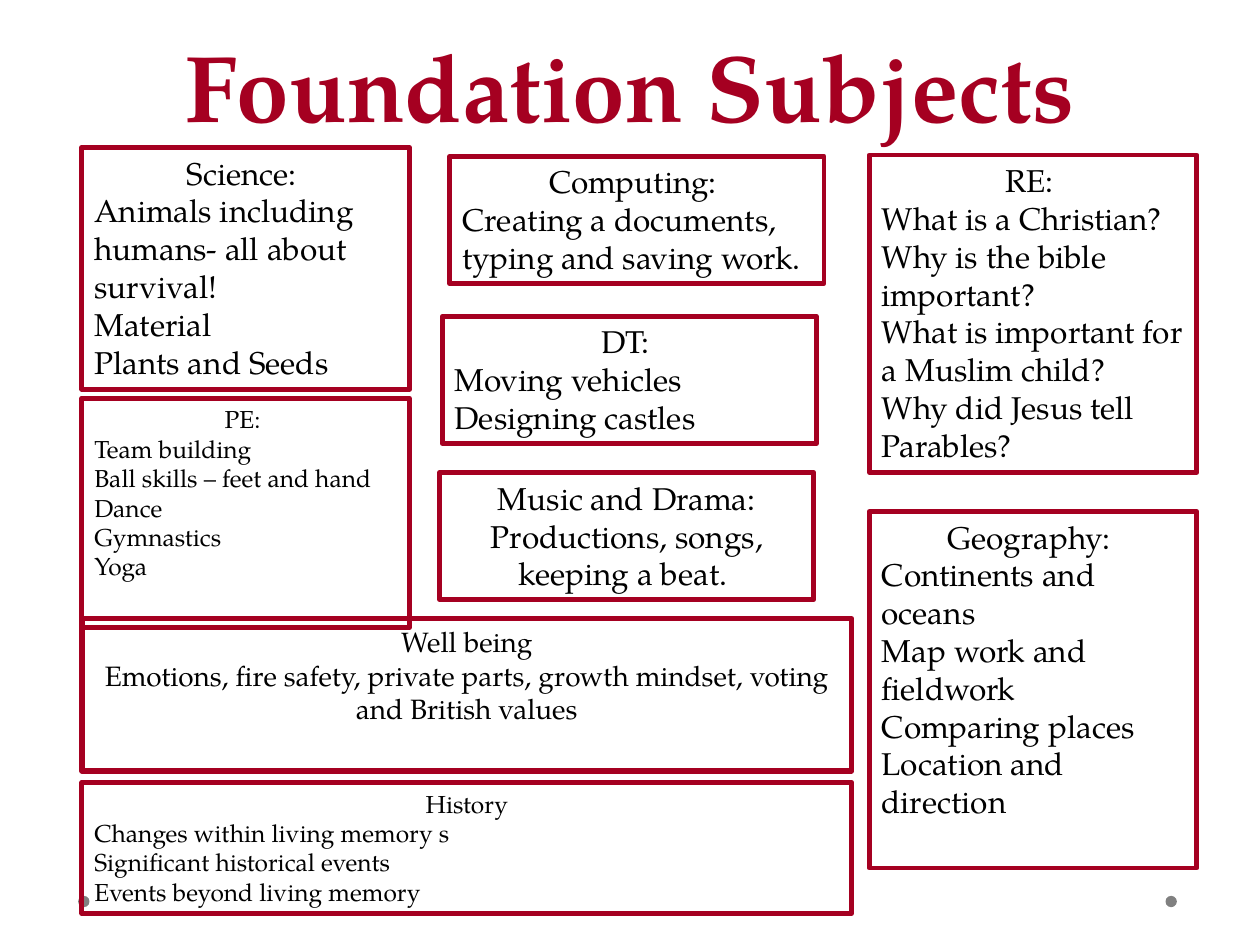
"""Build the Foundation Subjects overview slide."""
from pptx import Presentation
from pptx.dml.color import RGBColor
from pptx.enum.shapes import MSO_SHAPE
from pptx.enum.text import MSO_ANCHOR, MSO_AUTO_SIZE, PP_ALIGN
from pptx.util import Inches, Pt

CENTER, LEFT = PP_ALIGN.CENTER, PP_ALIGN.LEFT
TOP, BOTTOM = MSO_ANCHOR.TOP, MSO_ANCHOR.BOTTOM
OVAL, NO_FIT = MSO_SHAPE.OVAL, MSO_AUTO_SIZE.NONE

THEME = {
    "font": "TeX Gyre Pagella",
    "crimson": RGBColor.from_string("A50021"),
    "ink": RGBColor.from_string("000000"),
    "dot": RGBColor.from_string("808080"),
    "title": 54, "large": 18, "medium": 16, "small": 14,
    "border": 2.75, "heavy border": 3,
}

deck = Presentation()
deck.slide_width, deck.slide_height = Inches(10), Inches(7.5)
COLUMN, ROW = deck.slide_width / 100, deck.slide_height / 75
page = deck.slides.add_slide(deck.slide_layouts[5])


def cells(left, top, width, height):
    """Turn grid columns and rows into slide lengths."""
    return [int(left * COLUMN), int(top * ROW), int(width * COLUMN), int(height * ROW)]


def write(para, text, size, color="ink", align=LEFT, bold=False):
    """Write one formatted paragraph."""
    para.alignment = align
    span = para.add_run()
    span.text = text
    span.font.name, span.font.size, span.font.bold = THEME["font"], Pt(THEME[size]), bold
    span.font.color.rgb = THEME[color]


for left in (92.5, 6.2):
    dot = page.shapes.add_shape(OVAL, *cells(left, 71.1, 0.9, 0.9))
    dot.shadow.inherit = False
    dot.fill.solid()
    dot.fill.fore_color.rgb = THEME["dot"]
    dot.line.fill.background()

title = page.shapes.title
title.left, title.top, title.width, title.height = cells(5, -5.8, 90, 17.5)
title.text_frame.vertical_anchor = BOTTOM
title.text_frame.auto_size = NO_FIT
title_para = title.text_frame.paragraphs[0]
title_para.line_spacing = Pt(58)
write(title_para, "Foundation Subjects", "title", color="crimson", align=CENTER, bold=True)

SIDE, MIDDLE, WIDE = 26, 29.7, 61.1
LEFT_EDGE, RIGHT_EDGE = 6.5, 69
subjects = [
    ((LEFT_EDGE, 11.7, SIDE, 19.2), "large", "border", LEFT,
     ["Science: ", "Animals including humans- all about survival!", "Material",
      "Plants and Seeds"]),
    ((35.7, 12.4, MIDDLE, 10.1), "large", "border", LEFT,
     ["Computing: ", "Creating a documents, typing and saving work."]),
    ((RIGHT_EDGE, 12.3, SIDE, 25.2), "large", "border", LEFT,
     ["RE: ", "What is a Christian?", "Why is the bible important?",
      "What is important for a Muslim child?", "Why did Jesus tell Parables?"]),
    ((35.1, 25.1, MIDDLE, 10.1), "large", "border", LEFT,
     ["DT: ", "Moving vehicles", "Designing castles"]),
    ((RIGHT_EDGE, 40.6, SIDE, 28.3), "large", "border", LEFT,
     ["Geography: ", "Continents and oceans", "Map work and fieldwork",
      "Comparing places", "Location and direction"]),
    ((34.9, 37.5, MIDDLE, 10.1), "large", "border", CENTER,
     ["Music and Drama:", "Productions, songs, keeping a beat. "]),
    ((LEFT_EDGE, 31.6, SIDE, 18.2), "small", "border", LEFT,
     ["PE: ", "Team building", "Ball skills – feet and hand", "Dance",
      "Gymnastics", "Yoga"]),
    ((LEFT_EDGE, 62.1, WIDE, 10.4), "small", "border", LEFT,
     ["History", "Changes within living memory s", "Significant historical events",
      "Events beyond living memory"]),
    ((LEFT_EDGE, 49.1, WIDE, 12.1), "medium", "heavy border", CENTER,
     ["Well being",
      "Emotions, fire safety, private parts, growth mindset, voting and British values"]),
]

for place, size, border, align, lines in subjects:
    box = page.shapes.add_textbox(*cells(*place))
    box.line.color.rgb = THEME["crimson"]
    box.line.width = Pt(THEME[border])
    frame = box.text_frame
    frame.word_wrap = True
    frame.auto_size = NO_FIT
    frame.vertical_anchor = TOP
    for index, line in enumerate(lines):
        para = frame.add_paragraph() if index else frame.paragraphs[0]
        write(para, line, size, align=align if index else CENTER)

deck.save("out.pptx")
